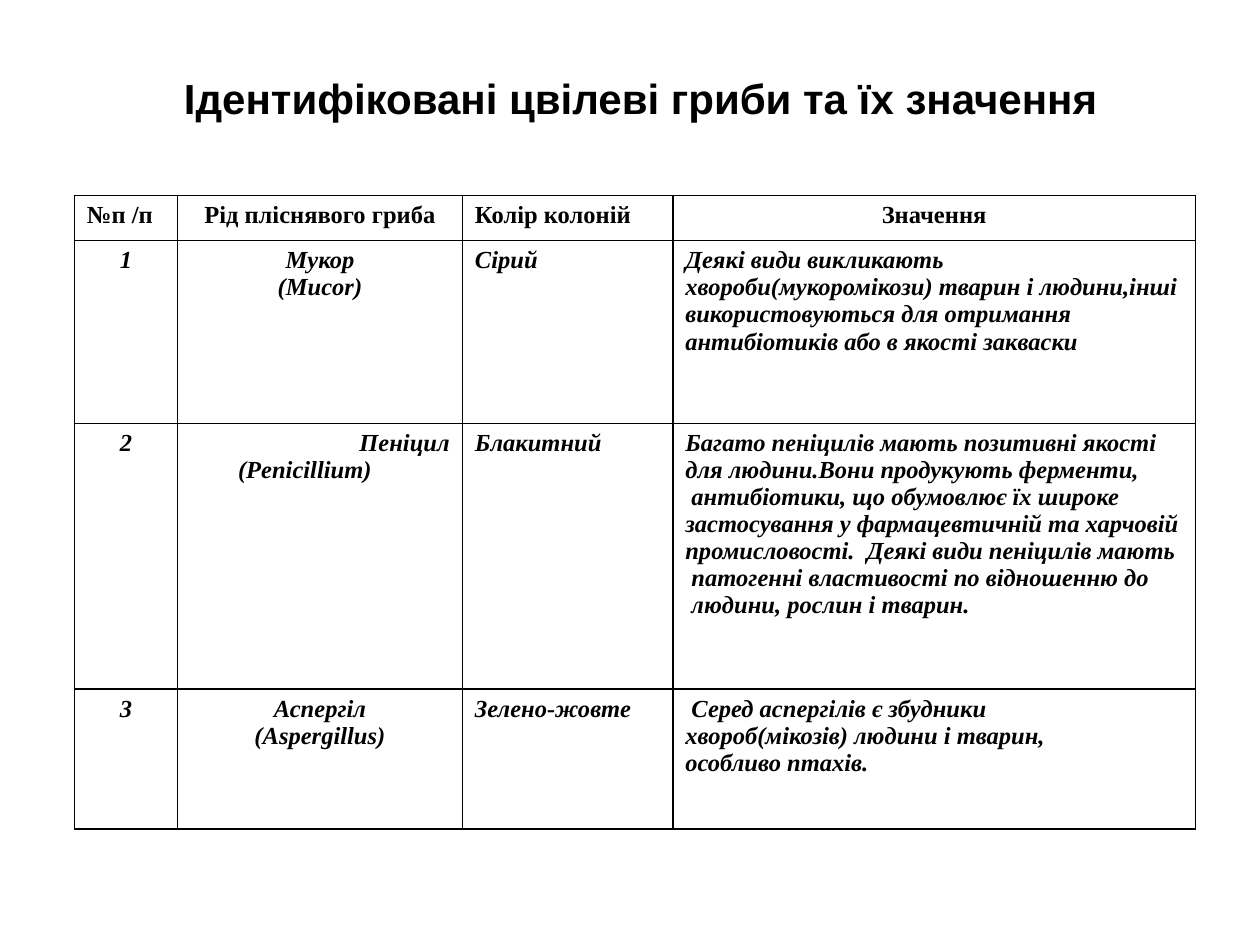
from lxml.etree import SubElement
from pptx import Presentation
from pptx.dml.color import RGBColor
from pptx.enum.text import MSO_ANCHOR, PP_ALIGN
from pptx.oxml.ns import qn
from pptx.util import Inches, Pt

BLACK = RGBColor(0x00, 0x00, 0x00)
WHITE = RGBColor(0xFF, 0xFF, 0xFF)
LEFT, CENTER, RIGHT, JUSTIFY = (
    PP_ALIGN.LEFT, PP_ALIGN.CENTER, PP_ALIGN.RIGHT, PP_ALIGN.JUSTIFY)
HANGING = Inches(0.38)

COLUMNS = [0.82, 2.26, 1.67, 4.15]
ROWS = [0.36, 1.45, 2.11, 1.11]
HEADER = ["№п /п", "Рід пліснявого гриба", "Колір колоній", "Значення"]
HEADER_ALIGNS = [JUSTIFY, CENTER, JUSTIFY, CENTER]
BODY_ALIGNS = [CENTER, CENTER, JUSTIFY, LEFT]
FUNGI = [
    ["1", "Мукор\n(Mucor)", "Сірий",
     "Деякі види викликають\n"
     "хвороби(мукоромікози) тварин і людини,інші\n"
     "використовуються для отримання\n"
     "антибіотиків або в якості закваски"],
    ["2", "Пеніцил\n(Penicillium)", "Блакитний",
     "Багато пеніцилів мають позитивні якості\n"
     "для людини.Вони продукують ферменти,\n"
     " антибіотики, що обумовлює їх широке\n"
     "застосування у фармацевтичній та харчовій\n"
     "промисловості.  Деякі види пеніцилів мають\n"
     " патогенні властивості по відношенню до\n"
     " людини, рослин і тварин."],
    ["3", "Аспергіл\n(Aspergillus)", "Зелено-жовте",
     " Серед аспергілів є збудники\n"
     "хвороб(мікозів) людини і тварин,\n"
     "особливо птахів."],
]


class SlideBuilder:
    title_font, title_size = "Arial", Pt(24)
    table_font, table_size = "Times New Roman", Pt(14)

    def __init__(self, slide):
        self.slide = slide

    def add_run(self, p, text, font, size, italic=False):
        r = p.add_run()
        r.text = text
        r.font.name, r.font.size = font, size
        r.font.bold, r.font.italic = True, italic
        r.font.color.rgb = BLACK

    def title(self, text, left, top, width, height):
        sp = self.slide.shapes.add_textbox(
            Inches(left), Inches(top), Inches(width), Inches(height))
        tf = sp.text_frame
        tf.word_wrap = True
        tf.vertical_anchor = MSO_ANCHOR.MIDDLE
        tf.margin_left, tf.margin_top = Inches(0.27), Inches(0.23)
        p = tf.paragraphs[0]
        p.alignment = CENTER
        self.add_run(p, text, self.title_font, self.title_size)

    def table(self, left, top, columns, rows):
        table = self.slide.shapes.add_table(
            len(rows), len(columns), Inches(left), Inches(top),
            Inches(sum(columns)), Inches(sum(rows))).table
        for column, width in zip(table.columns, columns):
            column.width = Inches(width)
        for row, height in zip(table.rows, rows):
            row.height = Inches(height)
        return table

    def cell(self, cell, text, align, italic):
        tf = cell.text_frame
        for i, line in enumerate(text.split("\n")):
            p = tf.add_paragraph() if i else tf.paragraphs[0]
            p.alignment = align
            self.indent(p, HANGING, -HANGING)
            self.add_run(p, line, self.table_font, self.table_size, italic)
        self.borders(cell)
        cell.fill.solid()
        cell.fill.fore_color.rgb = WHITE

    def indent(self, p, margin, first_line):
        pPr = p._p.get_or_add_pPr()
        pPr.set("marL", str(int(margin)))
        pPr.set("indent", str(int(first_line)))

    def borders(self, cell):
        tcPr = cell._tc.get_or_add_tcPr()
        for side in ("a:lnL", "a:lnR", "a:lnT", "a:lnB"):
            ln = SubElement(tcPr, qn(side), w=str(Pt(1)))
            fill = SubElement(ln, qn("a:solidFill"))
            SubElement(fill, qn("a:srgbClr"), val=str(BLACK))


def main():
    prs = Presentation()
    prs.slide_width, prs.slide_height = Inches(10), Inches(7.5)
    s = SlideBuilder(prs.slides.add_slide(prs.slide_layouts[6]))

    # Table of fungi
    table = s.table(0.59, 1.55, COLUMNS, ROWS)
    for i, row in enumerate([HEADER] + FUNGI):
        aligns = BODY_ALIGNS if i else HEADER_ALIGNS
        for j, (text, align) in enumerate(zip(row, aligns)):
            s.cell(table.cell(i, j), text, align, italic=i > 0)

    # The second genus is split between the right and left edges
    name, latin = table.cell(2, 1).text_frame.paragraphs
    name.alignment, latin.alignment = RIGHT, LEFT
    s.indent(latin, HANGING, 0)

    # Title
    s.title("Ідентифіковані цвілеві гриби та їх значення", 0.5, 0.3, 9, 0.77)

    prs.save("out.pptx")


if __name__ == "__main__":
    main()
